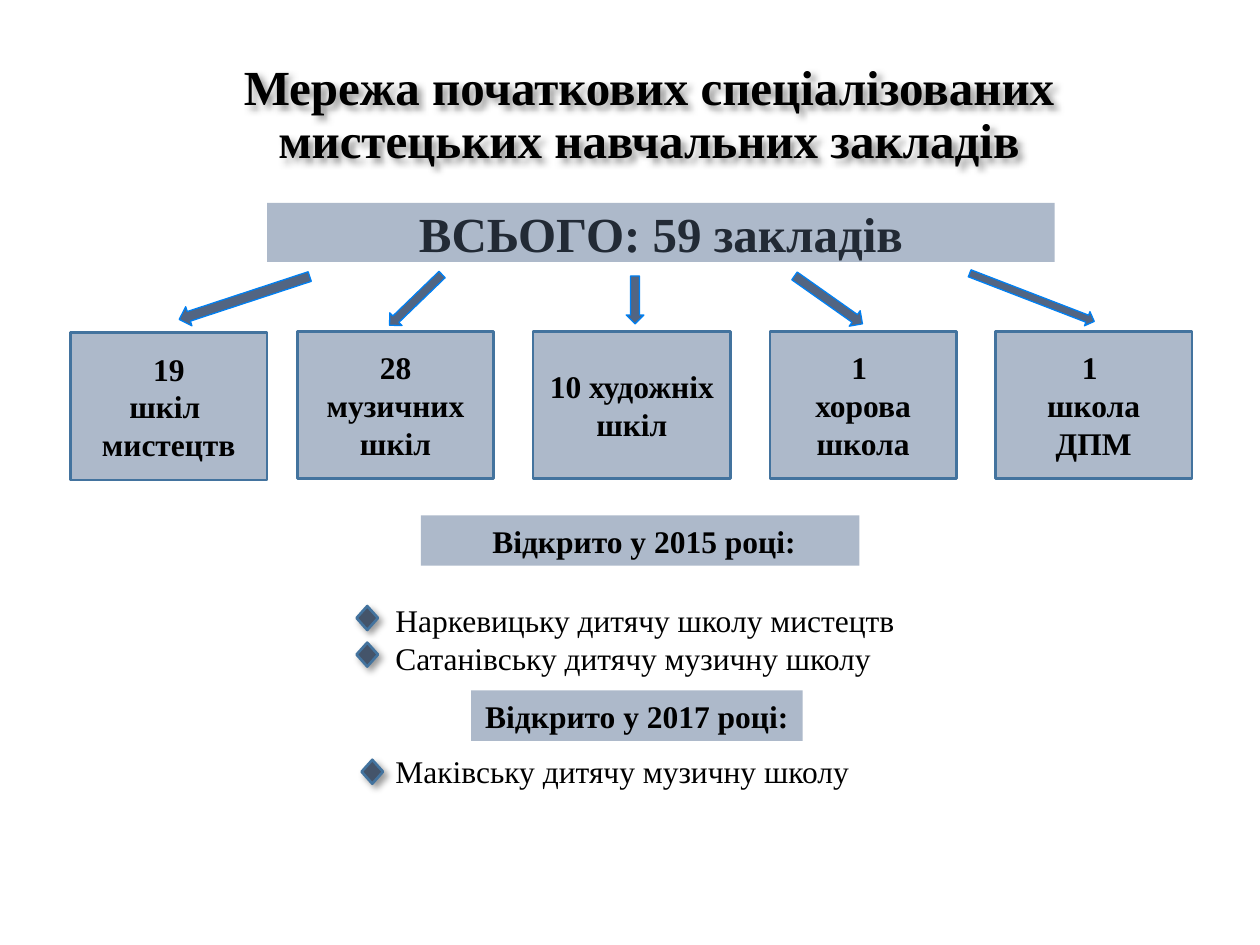
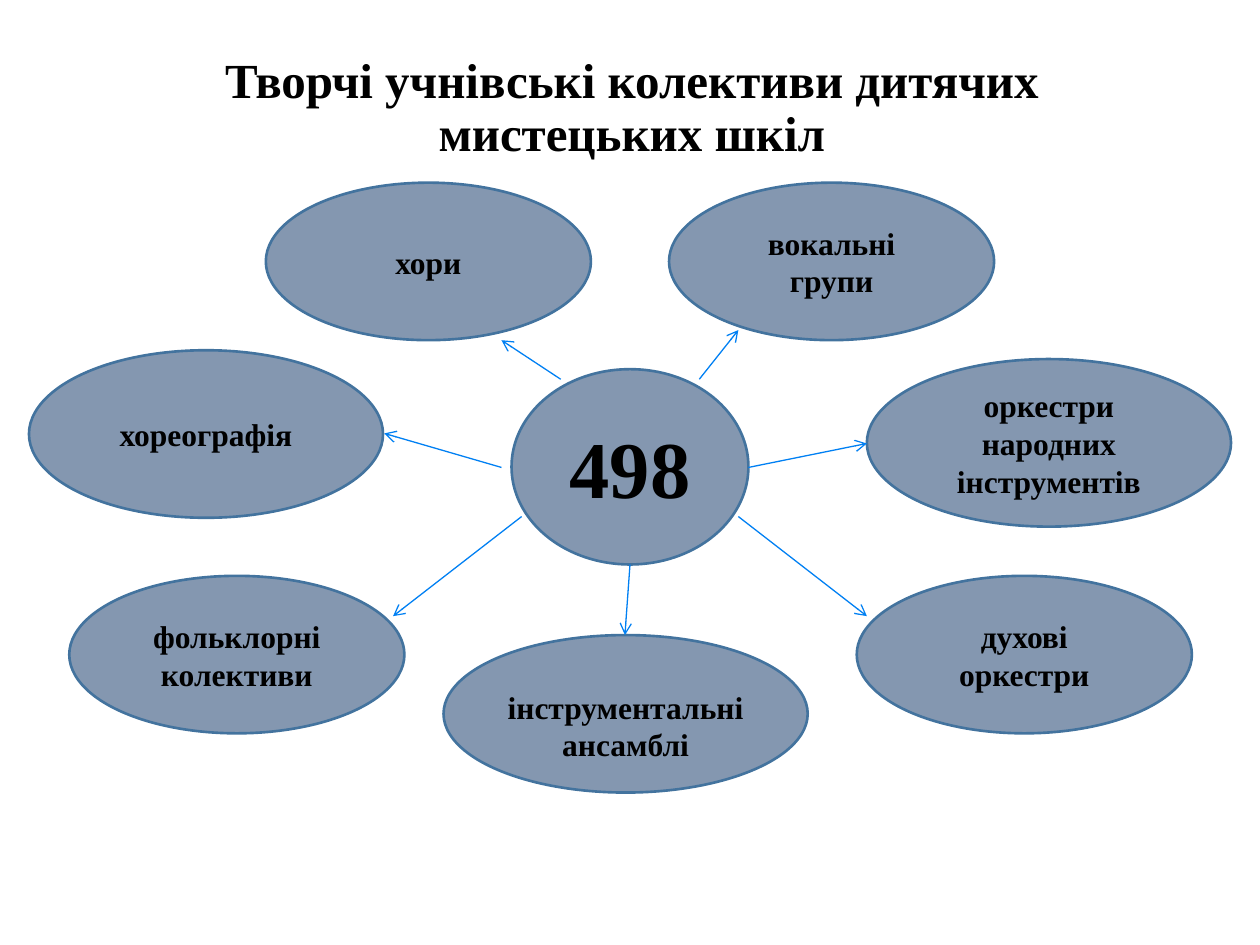
from lxml import etree
from pptx import Presentation
from pptx import util as u
from pptx.dml.color import RGBColor
from pptx.enum import shapes, text
from pptx.oxml import ns

COLORS = {
    "ink": "000000", "total": "222A35", "panel": "ADB9CA", "oval": "8497B0",
    "outline": "43739E", "arrow": "526582", "link": "0080F3", "marker": "44546A",
}
FONT = "Times New Roman"
KIND = shapes.MSO_SHAPE
MIDDLE = text.MSO_ANCHOR.MIDDLE
CENTER = text.PP_ALIGN.CENTER

deck = Presentation()
deck.slide_width, deck.slide_height = u.Inches(10), u.Inches(7.5)


def draw(page, kind, place, fill=None, line=None, width=1.5, shadow=False):
    place = [u.Inches(value) for value in place]
    if kind is None:
        shape = page.shapes.add_textbox(*place)
    else:
        shape = page.shapes.add_shape(kind, *place)
        shape.fill.solid()
        shape.fill.fore_color.rgb = RGBColor.from_string(COLORS[fill])
        if line:
            shape.line.color.rgb = RGBColor.from_string(COLORS[line])
            shape.line.width = u.Pt(width)
        else:
            shape.line.fill.background()
    shape.shadow.inherit = False
    if shadow:
        effects = shape._element.spPr.find(ns.qn("a:effectLst"))
        outer = etree.SubElement(effects, ns.qn("a:outerShdw"), blurRad=str(u.Pt(4)),
                                 dist=str(u.Pt(3)), dir="2700000", algn="tl", rotWithShape="0")
        color = etree.SubElement(outer, ns.qn("a:srgbClr"), val=COLORS["ink"])
        etree.SubElement(color, ns.qn("a:alpha"), val="40000")
    return shape


def write(shape, lines, size=18, color="ink", bold=True, frame=None, para_format=None):
    box = shape.text_frame
    frame_format = {"word_wrap": True, "vertical_anchor": MIDDLE, **(frame or {})}
    for name, value in frame_format.items():
        setattr(box, name, value)
    for index, line in enumerate(lines):
        para = box.add_paragraph() if index else box.paragraphs[0]
        for name, value in {"alignment": CENTER, **(para_format or {})}.items():
            setattr(para, name, value)
        span = para.add_run()
        span.text = line
        for name, value in {"name": FONT, "size": u.Pt(size), "bold": bold}.items():
            setattr(span.font, name, value)
        span.font.color.rgb = RGBColor.from_string(COLORS[color])


titles = [
    ("Мережа початкових спеціалізованих мистецьких навчальних закладів",
     (0.84, 0.19, 8.62, 1.46), True),
    ("Творчі учнівські колективи дитячих мистецьких шкіл", (1.01, 0.24, 8.01, 1.25), False),
]
pages = []
for title, place, shadow in titles:
    page = deck.slides.add_slide(deck.slide_layouts[6])
    write(draw(page, None, place, shadow=shadow), [title], 28, para_format={"line_spacing": 0.9})
    pages.append(page)
network, ensembles = pages

total = draw(network, KIND.RECTANGLE, (2.12, 1.61, 6.25, 0.47), "panel")
write(total, ["ВСЬОГО: 59 закладів"], 28, "total")

schools = [
    (0.56, 2.64, 1.56, ["19", "шкіл ", "мистецтв"]),
    (2.36, 2.63, 1.56, ["28", "музичних шкіл"]),
    (4.23, 2.63, 1.57, ["10 художніх шкіл"]),
    (6.11, 2.63, 1.48, ["1 ", "хорова школа"]),
    (7.9, 2.63, 1.56, ["1 ", "школа ДПМ"]),
]
for left, top, width, lines in schools:
    write(draw(network, KIND.RECTANGLE, (left, top, width, 1.17), "panel", "outline"), lines)

branches = [
    (1.86, 1.82, 0.16, 1.09, 251.8),
    (3.23, 2.09, 0.14, 0.58, 226),
    (4.97, 2.19, 0.14, 0.38, 180),
    (6.5, 2.05, 0.15, 0.66, 125.2),
    (8.13, 1.83, 0.12, 1.06, 111.1),
]
for *place, angle in branches:
    draw(network, KIND.UP_ARROW, place, "arrow", "link", 0.75).rotation = angle

openings = [
    (" Відкрито у 2015 році:", (3.34, 4.09, 3.48, 0.4), True),
    ("Відкрито у 2017 році:", (3.74, 5.48, 2.63, 0.4), False),
]
for heading, place, wrap in openings:
    label = draw(network, KIND.RECTANGLE, place, "panel")
    write(label, [heading], frame={"word_wrap": wrap, "vertical_anchor": text.MSO_ANCHOR.TOP})

opened = draw(network, None, (3.04, 4.72, 5, 1.62))
write(opened, ["Наркевицьку дитячу школу мистецтв", "Сатанівську дитячу музичну школу",
               "Маківську дитячу музичну школу"], bold=False,
      frame={"vertical_anchor": text.MSO_ANCHOR.TOP},
      para_format={"alignment": text.PP_ALIGN.LEFT})
opened.text_frame.paragraphs[2].space_before = u.Pt(43)

for left, top in [(2.83, 4.81), (2.83, 5.1), (2.87, 6.03)]:
    draw(network, KIND.DIAMOND, (left, top, 0.17, 0.19), "marker", "outline", shadow=True)

flush = {"margin_left": 0, "margin_right": 0}
groups = [
    ("498", (4.06, 2.93, 1.88, 1.55), 46, {}),
    ("хореографія", (0.23, 2.78, 2.81, 1.33), 18, flush),
    ("фольклорні колективи", (0.55, 4.57, 2.66, 1.25), 18, flush),
    ("вокальні групи", (5.31, 1.45, 2.58, 1.25), 18, {}),
    ("духові оркестри", (6.8, 4.57, 2.66, 1.25), 18, {}),
    ("оркестри народних інструментів", (6.88, 2.85, 2.89, 1.33), 18, flush),
    ("інструментальні ансамблі", (3.52, 5.04, 2.89, 1.25), 18,
     {**flush, "vertical_anchor": text.MSO_ANCHOR.BOTTOM}),
    ("хори", (2.11, 1.45, 2.58, 1.25), 18, {}),
]
for name, place, size, frame in groups:
    write(draw(ensembles, KIND.OVAL, place, "oval", "outline"), [name], size, frame=frame)

links = [
    (5.55, 3.01, 5.86, 2.62),
    (5.94, 3.71, 6.88, 3.52),
    (4.45, 3.01, 3.98, 2.7),
    (3.98, 3.71, 3.05, 3.44),
    (4.14, 4.1, 3.12, 4.89),
    (5.86, 4.1, 6.88, 4.89),
    (5, 4.48, 4.96, 5.04),
]
for ends in links:
    link = ensembles.shapes.add_connector(
        shapes.MSO_CONNECTOR.STRAIGHT, *[u.Inches(value) for value in ends])
    link.line.color.rgb = RGBColor.from_string(COLORS["link"])
    link.line.width = u.Pt(0.75)
    etree.SubElement(link.line._get_or_add_ln(), ns.qn("a:tailEnd"), type="arrow")
    etree.SubElement(link._element.spPr, ns.qn("a:effectLst"))

deck.save("out.pptx")
